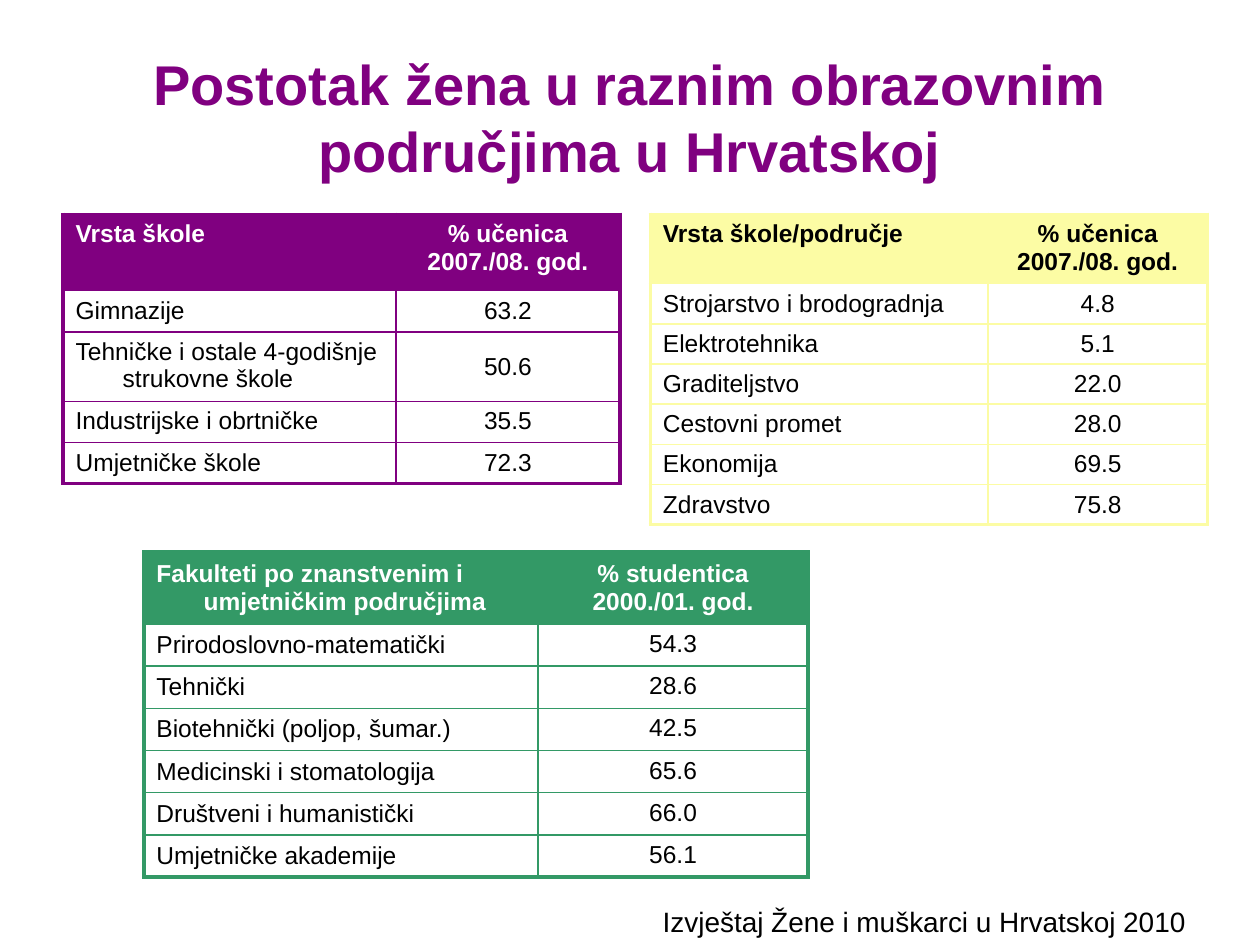
import pptx
import pptx.dml.color
import pptx.enum.text
import pptx.oxml
import pptx.oxml.ns
import pptx.util

Cm = pptx.util.Cm
Pt = pptx.util.Pt
RGBColor = pptx.dml.color.RGBColor
ALIGN = pptx.enum.text.PP_ALIGN
ANCHOR = pptx.enum.text.MSO_ANCHOR

PURPLE = RGBColor(0x80, 0x00, 0x80)
YELLOW = RGBColor(0xFC, 0xFC, 0xA4)
GREEN = RGBColor(0x33, 0x99, 0x66)
WHITE = RGBColor(0xFF, 0xFF, 0xFF)
BLACK = RGBColor(0x00, 0x00, 0x00)

SCHOOLS = [
    ("Vrsta škole", "% učenica\n2007./08. god."),
    ("Gimnazije", "63.2"),
    ("Tehničke i ostale 4-godišnje strukovne škole", "50.6"),
    ("Industrijske i obrtničke", "35.5"),
    ("Umjetničke škole", "72.3"),
]
FIELDS = [
    ("Vrsta škole/područje", "% učenica\n2007./08. god."),
    ("Strojarstvo i brodogradnja", "4.8"),
    ("Elektrotehnika", "5.1"),
    ("Graditeljstvo", "22.0"),
    ("Cestovni promet", "28.0"),
    ("Ekonomija", "69.5"),
    ("Zdravstvo", "75.8"),
]
FACULTIES = [
    ("Fakulteti po znanstvenim i umjetničkim područjima",
     "% studentica\n2000./01. god."),
    ("Prirodoslovno-matematički", "54.3"),
    ("Tehnički", "28.6"),
    ("Biotehnički (poljop, šumar.)", "42.5"),
    ("Medicinski i stomatologija", "65.6"),
    ("Društveni i humanistički", "66.0"),
    ("Umjetničke akademije", "56.1"),
]


def write(tf, text, font="Arial", size=14, color=BLACK, bold=False,
          align=ALIGN.LEFT, hanging=None):
    for i, line in enumerate(text.split("\n")):
        p = tf.paragraphs[0] if i == 0 else tf.add_paragraph()
        p.alignment = align
        if hanging:
            pPr = p._p.get_or_add_pPr()
            pPr.set("marL", str(hanging))
            pPr.set("indent", str(-hanging))
        r = p.add_run()
        r.text = line
        r.font.name = font
        r.font.size = Pt(size)
        r.font.bold = bold
        r.font.color.rgb = color


class SlideBuilder:
    font = "Arial"
    hanging = Cm(0.95)
    thin = Pt(1)
    thick = Pt(2.25)

    def __init__(self, prs):
        self.s = prs.slides.add_slide(prs.slide_layouts[5])

    def title(self, text, left, top, width, height):
        sp = self.s.shapes.title
        sp.left, sp.top, sp.width, sp.height = map(
            Cm, (left, top, width, height))
        tf = sp.text_frame
        tf.word_wrap = True
        tf.auto_size = pptx.enum.text.MSO_AUTO_SIZE.NONE
        tf.vertical_anchor = ANCHOR.MIDDLE
        write(tf, text, font=self.font, size=32, color=PURPLE, bold=True,
              align=ALIGN.CENTER)

    def text(self, text, left, top, width, height, size):
        sp = self.s.shapes.add_textbox(
            Cm(left), Cm(top), Cm(width), Cm(height))
        tf = sp.text_frame
        tf.word_wrap = True
        write(tf, text, font=self.font, size=size)

    def borders(self, cell, color, widths):
        tcPr = cell._tc.get_or_add_tcPr()
        for i, (side, width) in enumerate(zip("LRTB", widths)):
            tcPr.insert(i, pptx.oxml.parse_xml(
                f'<a:ln{side} {pptx.oxml.ns.nsdecls("a")} w="{width}">'
                f'<a:solidFill><a:srgbClr val="{color}"/></a:solidFill>'
                f'</a:ln{side}>'))

    def table(self, data, left, top, widths, heights, color,
              header_color=WHITE, label_align=ALIGN.JUSTIFY, middle=()):
        gf = self.s.shapes.add_table(
            len(data), len(widths), Cm(left), Cm(top),
            Cm(sum(widths)), Cm(sum(heights)))
        table = gf.table
        table.first_row = table.horz_banding = False
        for column, width in zip(table.columns, widths):
            column.width = Cm(width)
        last_row, last_col = len(data) - 1, len(widths) - 1
        for i, texts in enumerate(data):
            table.rows[i].height = Cm(heights[i])
            header = i == 0
            for j, text in enumerate(texts):
                cell = table.cell(i, j)
                outer = (j == 0, j == last_col, header, i == last_row)
                self.borders(cell, color,
                             [self.thick if o else self.thin for o in outer])
                if header:
                    cell.fill.solid()
                    cell.fill.fore_color.rgb = color
                else:
                    cell.fill.background()
                is_middle = (i, j) in middle
                cell.vertical_anchor = (
                    ANCHOR.MIDDLE if is_middle else ANCHOR.TOP)
                align = ALIGN.CENTER if j else label_align
                if len(text) > 40:
                    align = ALIGN.LEFT
                write(cell.text_frame, text, font=self.font, bold=header,
                      color=header_color if header else BLACK,
                      align=align, hanging=self.hanging)


def main():
    prs = pptx.Presentation()
    prs.slide_width, prs.slide_height = Cm(25.4), Cm(19.05)
    slide = SlideBuilder(prs)
    slide.title("Postotak žena u raznim obrazovnim područjima u Hrvatskoj",
                1.27, 0.76, 22.86, 3.18)
    slide.table(SCHOOLS, 1.27, 4.32, [6.71, 4.52],
                [1.54, 0.83, 1.4, 0.83, 0.83], PURPLE, middle=[(2, 1)])
    slide.table(FIELDS, 13.11, 4.32, [6.81, 4.42],
                [1.4] + [0.81] * 6, YELLOW, header_color=BLACK)
    slide.text("Izvještaj Žene i muškarci u Hrvatskoj 2010",
               13.11, 18.11, 11.4, 0.94, 16)
    slide.table(FACULTIES, 2.9, 11.13, [7.95, 5.44],
                [1.45] + [0.85] * 6, GREEN, label_align=ALIGN.LEFT,
                middle=[(0, 1)] + [(i, 0) for i in range(len(FACULTIES))])
    prs.save("out.pptx")


if __name__ == "__main__":
    main()
